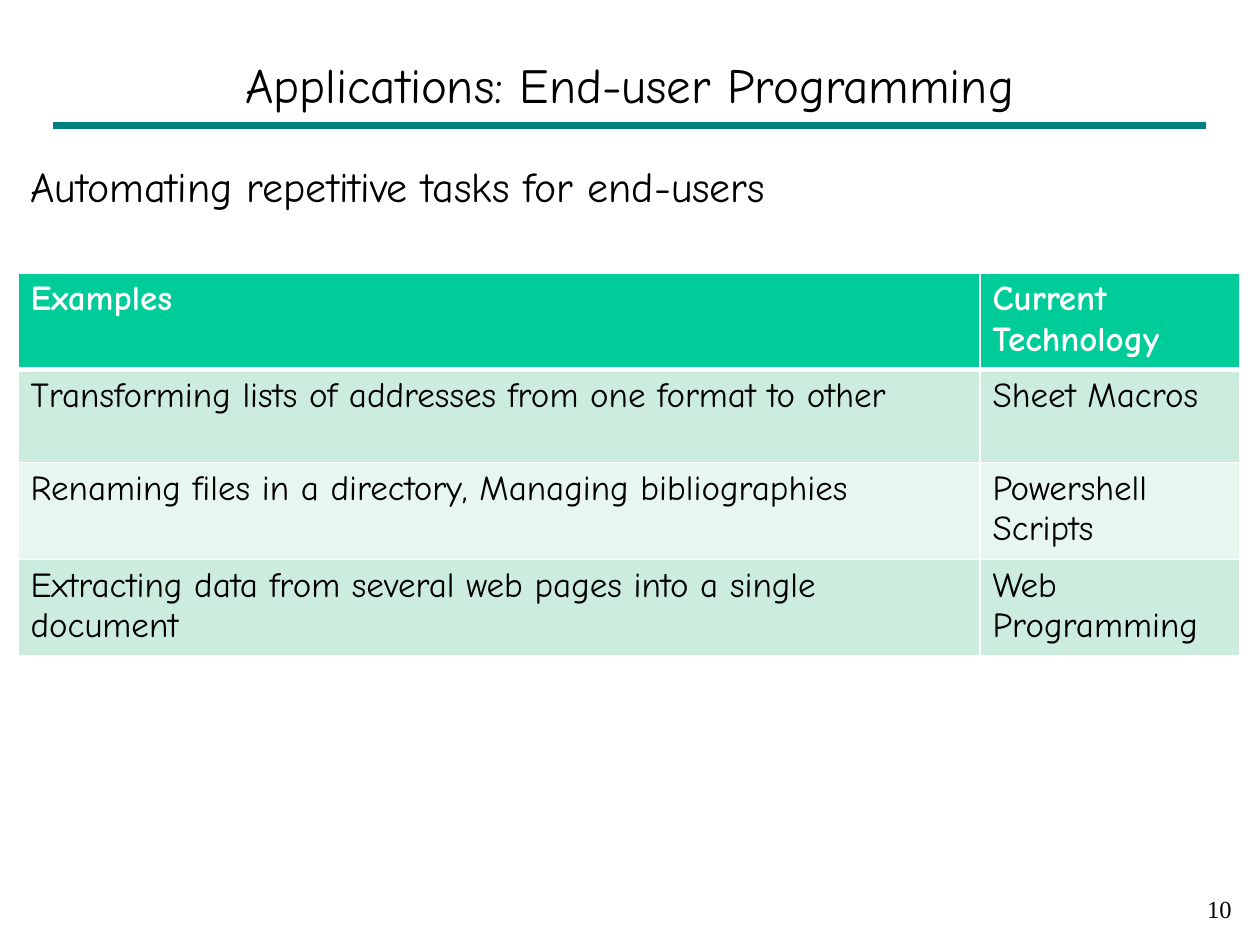
"""Build the slide on end-user programming with its table of examples."""
from lxml.etree import SubElement
from pptx import Presentation
from pptx.dml.color import RGBColor
from pptx.enum.shapes import MSO_CONNECTOR
from pptx.enum.text import MSO_ANCHOR, PP_ALIGN
from pptx.oxml import parse_xml
from pptx.oxml.ns import nsdecls, qn
from pptx.util import Pt

PX = 914400 // 126
BLACK = RGBColor(0x00, 0x00, 0x00)
WHITE = RGBColor(0xFF, 0xFF, 0xFF)
TEAL = RGBColor(0x00, 0x80, 0x80)
GREEN = RGBColor(0x00, 0xCC, 0x99)
MINT = RGBColor(0xCC, 0xEC, 0xDE)
PALE = RGBColor(0xE7, 0xF6, 0xEF)


def write(frame, text, size=20, font="Comic Neue", color=BLACK, bold=False,
          align=PP_ALIGN.LEFT, anchor=MSO_ANCHOR.TOP):
    frame.word_wrap = True
    frame.vertical_anchor = anchor
    para = frame.paragraphs[0]
    para.alignment = align
    span = para.add_run()
    span.text = text
    span.font.name = font
    span.font.size = Pt(size)
    span.font.bold = bold
    span.font.color.rgb = color


deck = Presentation()
deck.slide_width = 1260 * PX
deck.slide_height = 945 * PX
page = deck.slides.add_slide(deck.slide_layouts[6])

rule = page.shapes.add_connector(
    MSO_CONNECTOR.STRAIGHT, 53 * PX, 126 * PX, 1206 * PX, 126 * PX)
rule.line.color.rgb = TEAL
rule.line.width = Pt(4)
SubElement(rule._element.spPr, qn("a:effectLst"))

texts = [
    ((18, 154, 1221, 693), "Automating repetitive tasks for end-users", {"size": 24}),
    ((982, 888, 262, 53), "10",
     {"size": 14, "font": "Times New Roman", "align": PP_ALIGN.RIGHT}),
    ((94, 42, 1071, 84), "Applications: End-user Programming",
     {"size": 28, "align": PP_ALIGN.CENTER, "anchor": MSO_ANCHOR.MIDDLE}),
]
for place, text, style in texts:
    box = page.shapes.add_textbox(*(length * PX for length in place))
    write(box.text_frame, text, **style)

rows = [
    ("Examples", "Current Technology"),
    ("Transforming lists of addresses from one format to other", "Sheet Macros"),
    ("Renaming files in a directory, Managing bibliographies", "Powershell Scripts"),
    ("Extracting data from several web pages into a single document", "Web Programming"),
]
fills = [GREEN, MINT, PALE, MINT]
table = page.shapes.add_table(
    4, 2, 18 * PX, 273 * PX, 1222 * PX, 372 * PX).table
for column, width in zip(table.columns, (962, 260)):
    column.width = width * PX

for row_index, (row, fill) in enumerate(zip(rows, fills)):
    table.rows[row_index].height = 93 * PX
    header = row_index == 0
    for column_index, text in enumerate(row):
        cell = table.cell(row_index, column_index)
        write(cell.text_frame, text, color=WHITE if header else BLACK, bold=header)
        cell.fill.solid()
        cell.fill.fore_color.rgb = fill
        widths = {"L": 1, "R": 1, "T": 3 if row_index == 1 else 1, "B": 3 if header else 1}
        for position, (side, width) in enumerate(widths.items()):
            border = parse_xml(
                f'<a:ln{side} {nsdecls("a")} w="{Pt(width)}"><a:solidFill>'
                f'<a:srgbClr val="{WHITE}"/></a:solidFill></a:ln{side}>')
            cell._tc.get_or_add_tcPr().insert(position, border)

deck.save("out.pptx")
